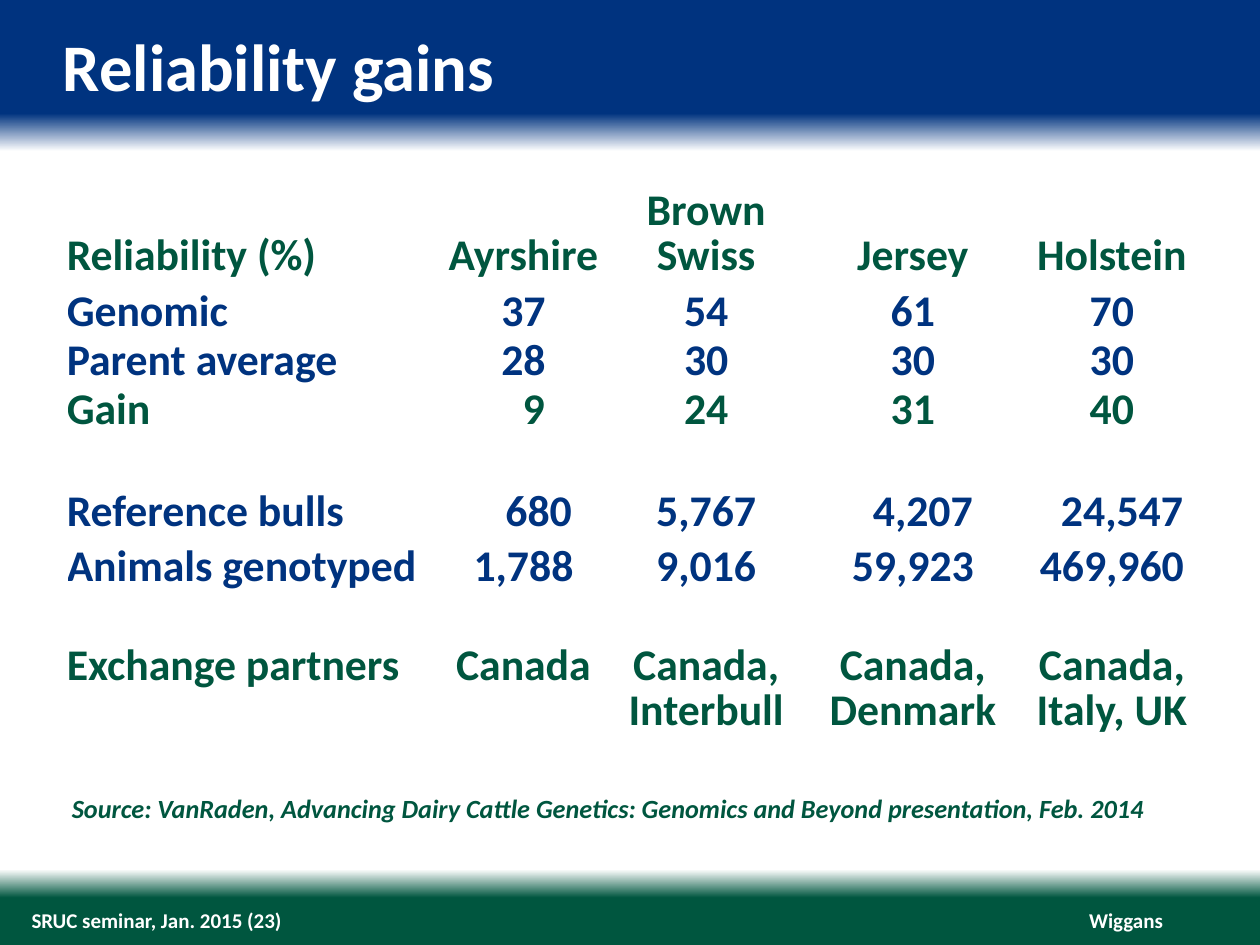
from lxml import etree
from pptx import Presentation
from pptx.dml.color import RGBColor
from pptx.enum import text
from pptx.oxml.ns import qn
from pptx.util import Inches, Pt

BLUE = RGBColor(0x00, 0x33, 0x7F)
GREEN = RGBColor(0x00, 0x56, 0x3F)
WHITE = RGBColor(0xFF, 0xFF, 0xFF)
FONT = "Calibri"
LEFT, CENTER, RIGHT = text.PP_ALIGN.LEFT, text.PP_ALIGN.CENTER, text.PP_ALIGN.RIGHT
TOP, MIDDLE, BOTTOM = text.MSO_ANCHOR.TOP, text.MSO_ANCHOR.MIDDLE, text.MSO_ANCHOR.BOTTOM

BACKGROUND_STOPS = [(0, BLUE), (12, BLUE), (16, WHITE), (92, WHITE), (95, GREEN), (100, GREEN)]
COLUMN_WIDTHS = [2.94, 1.37, 1.53, 1.75, 1.41]
GAP_ROW = (0.42, 0, 0, BLUE, [])
ROWS = [
    (0.77, 26, 0, GREEN, ["Reliability (%)", "Ayrshire", "Brown Swiss", "Jersey", "Holstein"]),
    (0.39, 28, 0, BLUE, ["Genomic", "37", "54", "61", "70"]),
    (0.39, 28, 0, BLUE, ["Parent average", "28", "30", "30", "30"]),
    (0.39, 28, 0, GREEN, ["Gain", "9", "24", "31", "40"]),
    GAP_ROW,
    (0.39, 28, 0, BLUE, ["Reference bulls", "680", "5,767", "4,207", "24,547"]),
    (0.44, 28, 0.05, BLUE, ["Animals genotyped", "1,788", "9,016", "59,923", "469,960"]),
    GAP_ROW,
    (0.72, 26, 0, GREEN, ["Exchange partners", "Canada", "Canada, Interbull",
                          "Canada, Denmark", "Canada, Italy, UK"]),
]
NUMBER_INDENTS = {"9": 0.16, "680": 0.24, "4,207": 0.16, "24,547": 0.16}


def add_span(para, words, size, color, italic=False):
    """Add one bold run to a paragraph."""
    span = para.add_run()
    span.text = words
    span.font.name = FONT
    span.font.size = Pt(size)
    span.font.bold = True
    span.font.italic = italic
    span.font.color.rgb = color


def add_line(page, left, top, width, height, words, size, color,
             align=LEFT, anchor=TOP, italic=False, wrap=True):
    """Place a single line of text in a box without margins."""
    box = page.shapes.add_textbox(Inches(left), Inches(top), Inches(width), Inches(height))
    frame = box.text_frame
    frame.margin_left = frame.margin_right = frame.margin_top = frame.margin_bottom = 0
    frame.word_wrap = wrap
    frame.vertical_anchor = anchor
    para = frame.paragraphs[0]
    para.alignment = align
    add_span(para, words, size, color, italic)


def paint_background(page):
    """Fade the page from a blue header through white to a green footer."""
    fill = page.background.fill
    fill.gradient()
    fill.gradient_angle = 270
    stops = next(page.element.iter(qn("a:gsLst")))
    for stop in list(stops):
        stops.remove(stop)
    for position, color in BACKGROUND_STOPS:
        stop = etree.SubElement(stops, qn("a:gs"), pos=str(position * 1000))
        etree.SubElement(stop, qn("a:srgbClr"), val=str(color))


def add_footer(page, left, top, width, height):
    """Place the seminar name and the speaker at the two ends of the footer."""
    add_line(page, left, top, 7.42, height, "SRUC seminar, Jan. 2015 (23)", 12, WHITE,
             anchor=MIDDLE)
    add_line(page, left + width - 0.59, top, 0.59, height, "Wiggans", 12, WHITE,
             align=RIGHT, anchor=MIDDLE, wrap=False)


def fill_cell(cell, words, spacing, color, align):
    """Write one table entry with exact line spacing."""
    cell.margin_left = Inches(NUMBER_INDENTS.get(words, 0))
    para = cell.text_frame.paragraphs[0]
    para.alignment = align
    para.line_spacing = Pt(spacing)
    add_span(para, words, 25, color)


def add_reliability_table(page, left, top, width):
    """Place the table of reliability by breed."""
    height = sum(row[0] for row in ROWS)
    table = page.shapes.add_table(len(ROWS), len(COLUMN_WIDTHS), Inches(left), Inches(top),
                                  Inches(width), Inches(height)).table
    table.first_row = table.horz_banding = False
    for column, column_width in zip(table.columns, COLUMN_WIDTHS):
        column.width = Inches(column_width)
    for index, (row, (row_height, spacing, top_margin, color, entries)) in enumerate(
            zip(table.rows, ROWS)):
        row.height = Inches(row_height)
        for cell in row.cells:
            cell.fill.background()
            cell.margin_left = cell.margin_right = 0
            cell.margin_top = Inches(top_margin)
            cell.margin_bottom = Inches(0 if index else 0.05)
            cell.vertical_anchor = TOP if index else BOTTOM
        for number, (cell, words) in enumerate(zip(row.cells, entries)):
            fill_cell(cell, words, spacing, color, CENTER if number else LEFT)


def build_page(deck):
    """Build the reliability gains slide."""
    page = deck.slides.add_slide(deck.slide_layouts[6])
    paint_background(page)
    add_footer(page, 0.25, 7.2, 8.98, 0.2)
    add_line(page, 0.5, 0.2, 9, 0.64, "Reliability gains", 38, WHITE)
    add_reliability_table(page, 0.53, 1.52, 9)
    add_line(page, 0.57, 6.29, 9, 0.25,
             "Source: VanRaden, Advancing Dairy Cattle Genetics: Genomics and Beyond "
             "presentation, Feb. 2014", 15, GREEN, italic=True)


def main():
    """Create and save the deck."""
    deck = Presentation()
    deck.slide_width, deck.slide_height = Inches(10), Inches(7.5)
    build_page(deck)
    deck.save("out.pptx")


if __name__ == "__main__":
    main()
